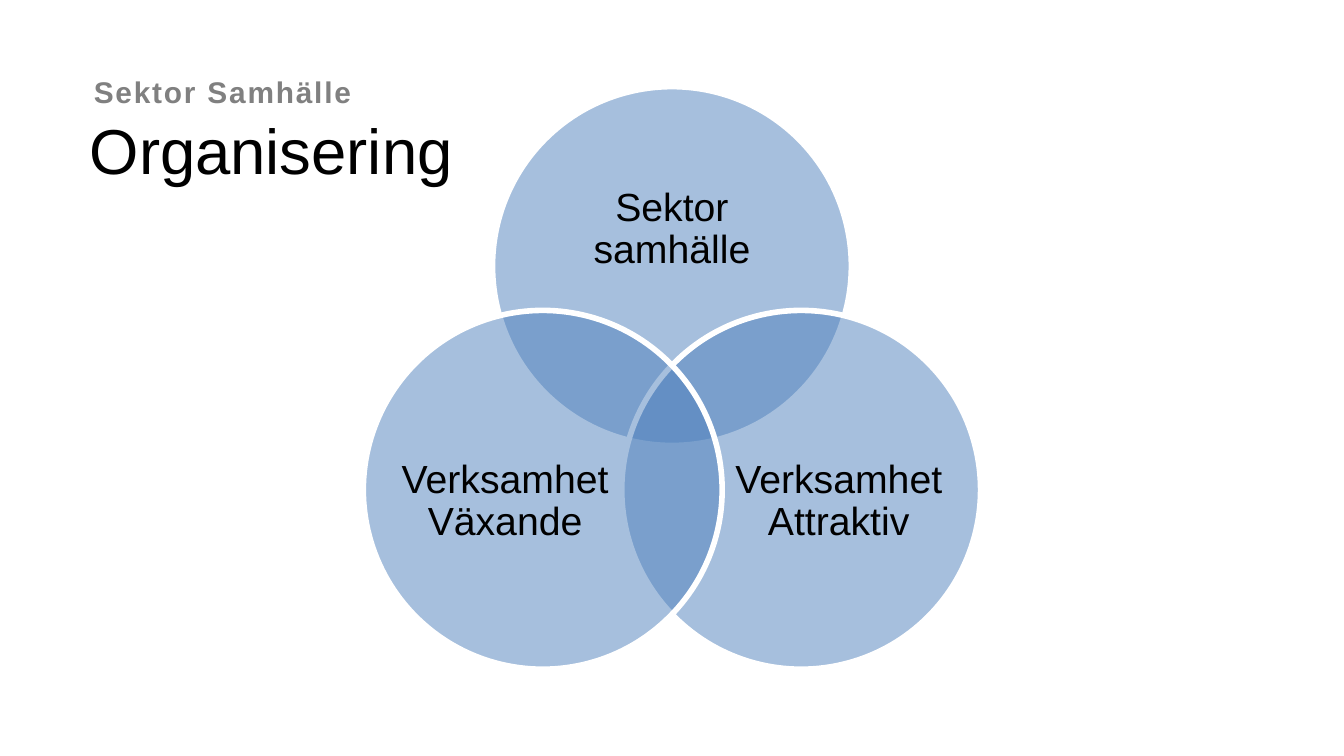
import math

from lxml import etree
from pptx import Presentation, util as u
from pptx.dml.color import RGBColor
from pptx.enum import shapes, text
from pptx.oxml.ns import qn

PX = u.Inches(1) // 100
SLIDE_WIDTH = 1000
SLIDE_HEIGHT = SLIDE_WIDTH * 9 / 16
BLACK = RGBColor(0, 0, 0)
GREY = RGBColor(0x80, 0x80, 0x80)
BLUE = RGBColor(0x4F, 0x81, 0xBD)
WHITE = RGBColor(0xFF, 0xFF, 0xFF)

# text, box, format
HEADINGS = [
    ("Sektor Samhälle", (60, 50, 703, 23),
     dict(size=16, color=GREY, bold=True, tracking=1, insets=(10, 5))),
    ("Organisering", (57, 78, 706, 50), dict(size=34, insets=(10, 5))),
]
# text, angle on the ring, label offset from the circle centre, label size
CIRCLES = [
    ("Sektor samhälle", -90, (0, -27), (196, 120)),
    ("Verksamhet Attraktiv", 30, (28, 9), (160, 147)),
    ("Verksamhet Växande", 150, (-28, 9), (160, 147)),
]
RING_CENTER = (500, 309)
RING_RADIUS = 111
DIAMETER = 267


def emu(*lengths):
    return [round(length * PX) for length in lengths]


def centered(x, y, width, height):
    return emu(x - width / 2, y - height / 2, width, height)


def add_text(parent, words, place, *, size, color=BLACK, bold=False, tracking=0,
             insets=(0, 0), anchor=text.MSO_ANCHOR.TOP,
             align=text.PP_ALIGN.LEFT, line_spacing=1.0):
    frame = parent.add_textbox(*place).text_frame
    frame.word_wrap = True
    frame.vertical_anchor = anchor
    frame.margin_left, frame.margin_top = emu(*insets)
    frame.margin_right, frame.margin_bottom = emu(*insets)
    para = frame.paragraphs[0]
    para.alignment = align
    para.line_spacing = line_spacing
    span = para.add_run()
    span.text = words
    span.font.name = "Arial"
    span.font.size = u.Pt(size)
    span.font.bold = bold
    span.font.color.rgb = color
    if tracking:
        span._r.get_or_add_rPr().set("spc", str(tracking * 100))


def add_circle(parent, x, y):
    circle = parent.add_shape(shapes.MSO_SHAPE.OVAL,
                              *centered(x, y, DIAMETER, DIAMETER))
    circle.shadow.inherit = False
    circle.fill.solid()
    circle.fill.fore_color.rgb = BLUE
    tint = circle._element.spPr.find(qn("a:solidFill")).find(qn("a:srgbClr"))
    etree.SubElement(tint, qn("a:alpha"), val="50000")
    circle.line.color.rgb = WHITE
    circle.line.width = u.Pt(3)


def main():
    deck = Presentation()
    deck.slide_width, deck.slide_height = emu(SLIDE_WIDTH, SLIDE_HEIGHT)
    page = deck.slides.add_slide(deck.slide_layouts[6])

    for words, place, style in HEADINGS:
        add_text(page.shapes, words, emu(*place), **style)

    venn = page.shapes.add_group_shape().shapes
    for words, angle, (dx, dy), label_size in CIRCLES:
        x = RING_CENTER[0] + RING_RADIUS * math.cos(math.radians(angle))
        y = RING_CENTER[1] + RING_RADIUS * math.sin(math.radians(angle))
        add_circle(venn, x, y)
        add_text(venn, words, centered(x + dx, y + dy, *label_size), size=21,
                 anchor=text.MSO_ANCHOR.MIDDLE, align=text.PP_ALIGN.CENTER,
                 line_spacing=0.9)

    deck.save("out.pptx")


if __name__ == "__main__":
    main()
